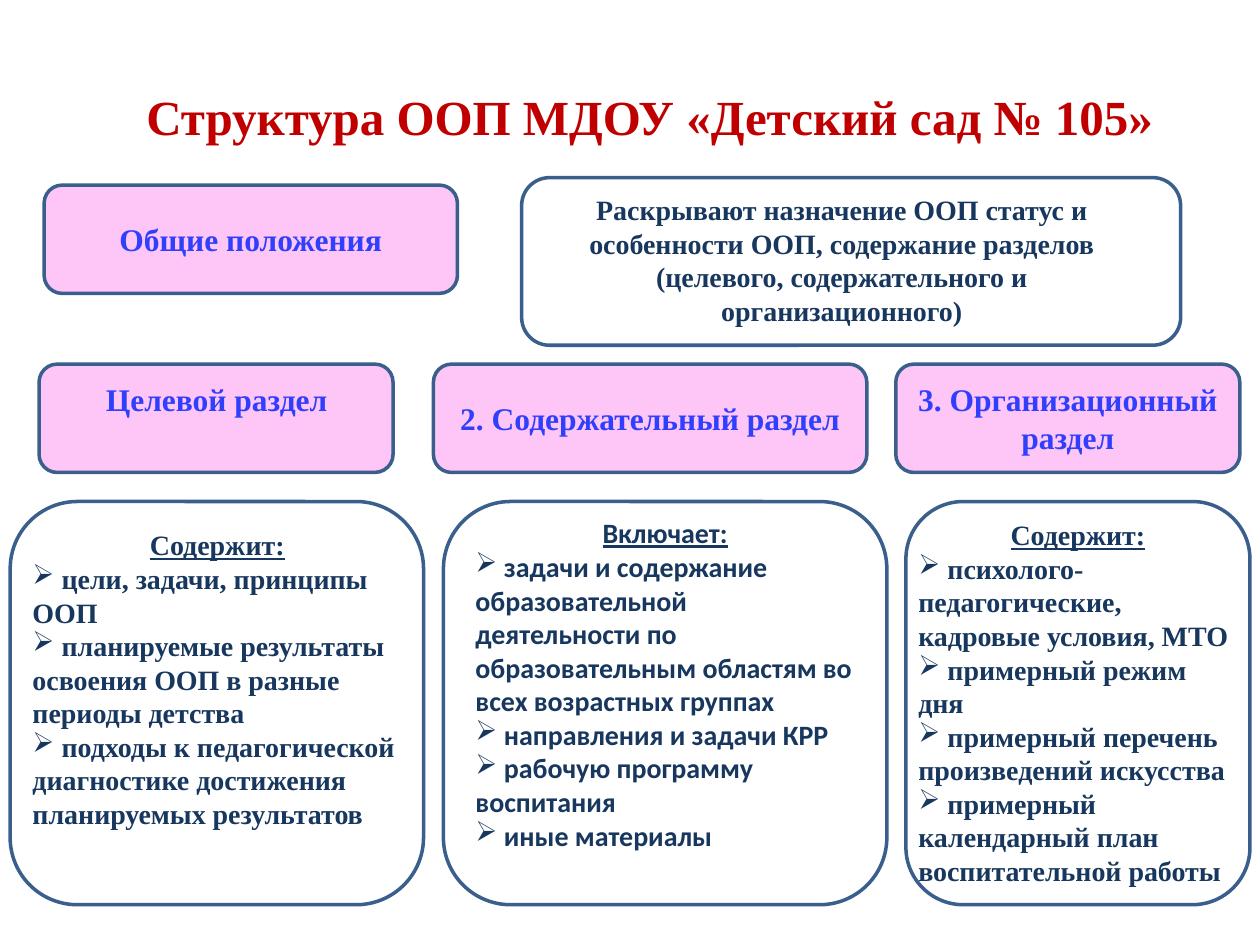
from lxml import etree
from pptx import Presentation
from pptx.dml.color import RGBColor
from pptx.enum.shapes import MSO_SHAPE
from pptx.enum.text import MSO_ANCHOR, MSO_AUTO_SIZE, PP_ALIGN
from pptx.oxml.ns import qn
from pptx.util import Pt

ROUNDED = MSO_SHAPE.ROUNDED_RECTANGLE
MIDDLE = MSO_ANCHOR.MIDDLE
GROW = MSO_AUTO_SIZE.SHAPE_TO_FIT_TEXT
LEFT, CENTER = PP_ALIGN.LEFT, PP_ALIGN.CENTER

RED = RGBColor(0xC0, 0x00, 0x00)
PINK = RGBColor(0xFE, 0xC6, 0xF7)
BLUE = RGBColor(0x30, 0x3F, 0xFC)
NAVY = RGBColor(0x17, 0x37, 0x5E)
OUTLINE = RGBColor(0x3A, 0x5F, 0x8C)
SERIF, SANS = "Times New Roman", "Calibri"

HEADER_TOP, HEADER_HEIGHT = 208.1, 61.9
PANEL_TOP, PANEL_HEIGHT = 286.6, 230.4


class SlideBuilder:
    def __init__(self, slide):
        self.slide = slide

    def box(self, left, top, width, height, fill=None):
        shape = self.slide.shapes.add_shape(
            ROUNDED, Pt(left), Pt(top), Pt(width), Pt(height))
        shape.shadow.inherit = False
        if fill is None:
            shape.fill.background()
        else:
            shape.fill.solid()
            shape.fill.fore_color.rgb = fill
        shape.line.color.rgb = OUTLINE
        shape.line.width = Pt(2)
        shape.text_frame.vertical_anchor = MIDDLE
        return shape.text_frame

    def text_box(self, left, top, width, height):
        shape = self.slide.shapes.add_textbox(
            Pt(left), Pt(top), Pt(width), Pt(height))
        shape.text_frame.word_wrap = True
        return shape.text_frame

    def style(self, paragraph, size, color, font=SERIF, align=CENTER):
        paragraph.alignment = align
        for run in paragraph.runs:
            run.font.name = font
            run.font.size = Pt(size)
            run.font.bold = True
            run.font.color.rgb = color

    def label(self, text_frame, text, size, color):
        text_frame.text = text
        self.style(text_frame.paragraphs[0], size, color)

    def section_header(self, left, top, width, text):
        text_frame = self.box(left, top, width, HEADER_HEIGHT, PINK)
        if text:
            self.label(text_frame, text, 18, BLUE)

    def bullet(self, paragraph, tag, **attributes):
        properties = paragraph._p.get_or_add_pPr()
        etree.SubElement(properties, qn(tag), attributes)
        return properties

    def bullet_list(self, text_frame, heading, items, font=SERIF):
        """Fill a frame with an underlined heading and arrow bullets."""
        self.label(text_frame, heading, 16, NAVY)
        first = text_frame.paragraphs[0]
        self.style(first, 16, NAVY, font)
        first.runs[0].font.underline = True
        for item in items:
            paragraph = text_frame.add_paragraph()
            self.bullet(paragraph, "a:buChar", char="➢")
            paragraph.text = " " + item
            self.style(paragraph, 16, NAVY, font, LEFT)


def main():
    presentation = Presentation()
    presentation.slide_width, presentation.slide_height = Pt(720), Pt(540)
    builder = SlideBuilder(
        presentation.slides.add_slide(presentation.slide_layouts[6]))

    title = builder.text_box(70.6, 43.2, 601.2, 453.6)
    title.margin_top = Pt(6)
    builder.label(title, "Структура ООП МДОУ «Детский сад № 105»", 28, RED)

    builder.section_header(25.2, 105.8, 236.2, "Общие положения")
    builder.box(298.1, 101.5, 376.6, 95.8)
    summary = builder.text_box(298.1, 106.6, 365.8, 85)
    summary.auto_size = GROW
    builder.label(
        summary,
        "Раскрывают назначение ООП статус и особенности ООП, содержание "
        "разделов (целевого, содержательного и организационного)", 16, NAVY)

    for left, width, text in (
            (22.3, 202.3, ""),
            (247.7, 247.7, "2. Содержательный раздел"),
            (511.9, 196.6, "3. Организационный раздел")):
        builder.section_header(left, HEADER_TOP, width, text)

    target = builder.text_box(28.1, 213.8, 191.5, 28.8)
    target.auto_size = GROW
    numbered = target.paragraphs[0]
    properties = builder.bullet(numbered, "a:buAutoNum", type="arabicPeriod")
    properties.set("marL", str(Pt(27)))
    properties.set("indent", str(-Pt(27)))
    builder.label(target, "Целевой раздел", 18, BLUE)

    builder.box(5.8, PANEL_TOP, 236.2, PANEL_HEIGHT)
    target_list = builder.text_box(11.5, 298.1, 225.4, 181.4)
    target_list.auto_size = GROW
    builder.bullet_list(target_list, "Содержит:", (
        "цели, задачи, принципы ООП",
        "планируемые результаты освоения ООП в разные периоды детства",
        "подходы к педагогической диагностике достижения планируемых "
        "результатов"))

    content_list = builder.box(253.4, PANEL_TOP, 253.4, PANEL_HEIGHT)
    content_list.margin_bottom = Pt(25.6)
    builder.bullet_list(content_list, "Включает:", (
        "задачи и содержание образовательной деятельности по "
        "образовательным областям во всех возрастных группах",
        "направления и задачи КРР",
        "рабочую программу воспитания",
        "иные материалы"), SANS)

    builder.box(517.7, PANEL_TOP, 196.6, PANEL_HEIGHT)
    organisation_list = builder.text_box(517.7, 292.3, 196.6, 223.2)
    organisation_list.auto_size = GROW
    builder.bullet_list(organisation_list, "Содержит:", (
        "психолого-педагогические, кадровые условия, МТО",
        "примерный режим дня",
        "примерный перечень произведений искусства",
        "примерный календарный план воспитательной работы"))

    presentation.save("out.pptx")


if __name__ == "__main__":
    main()
